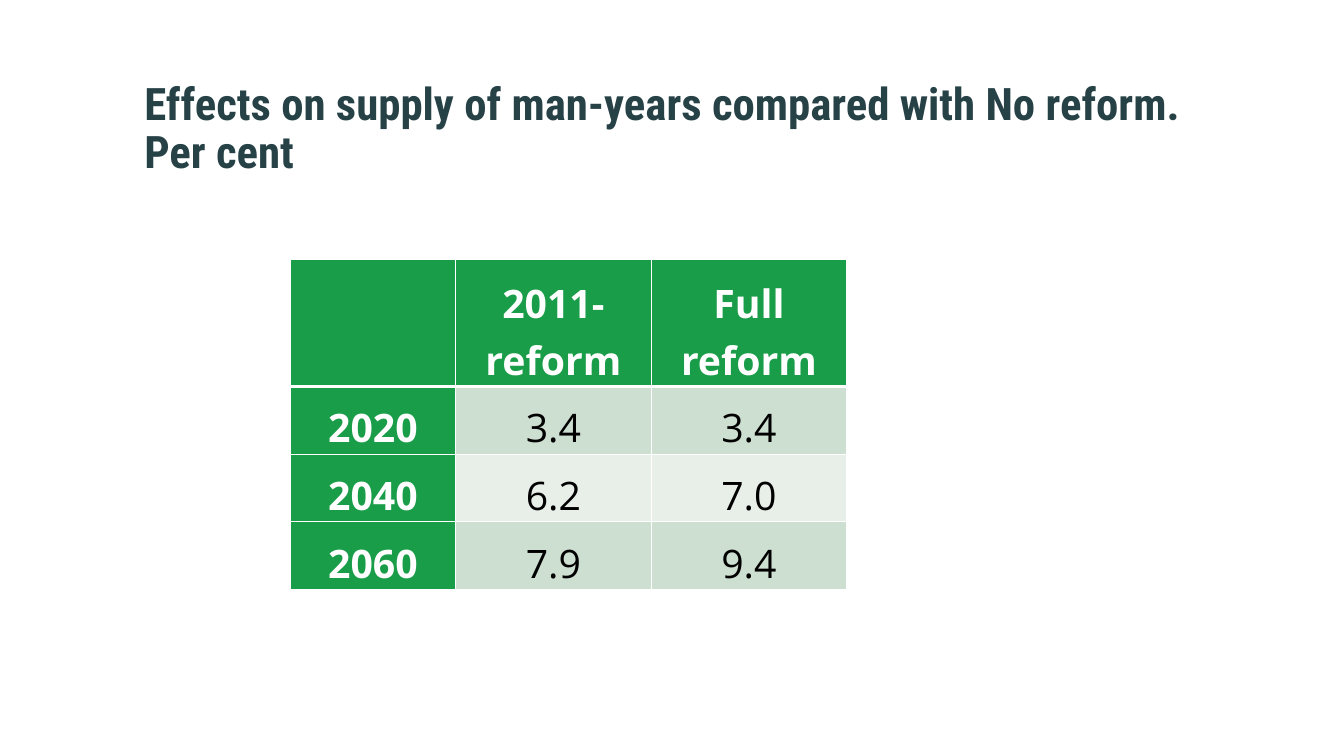
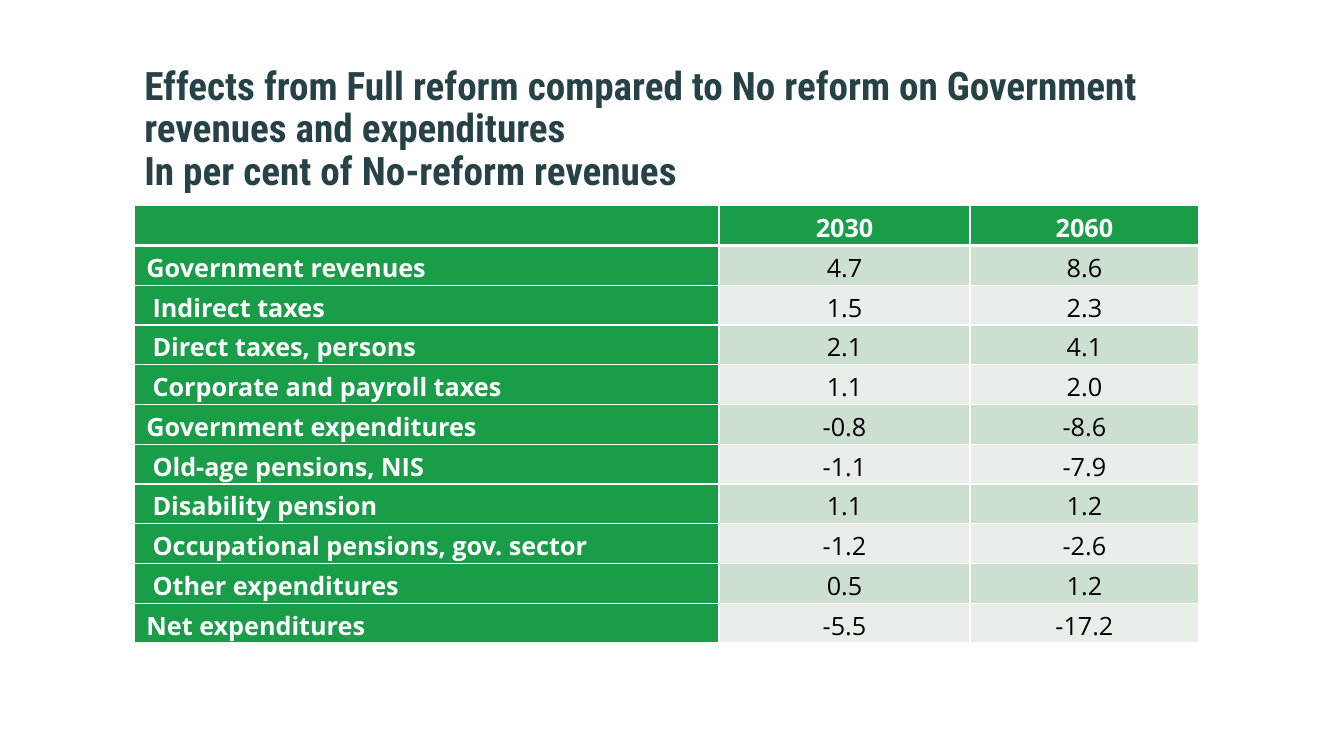
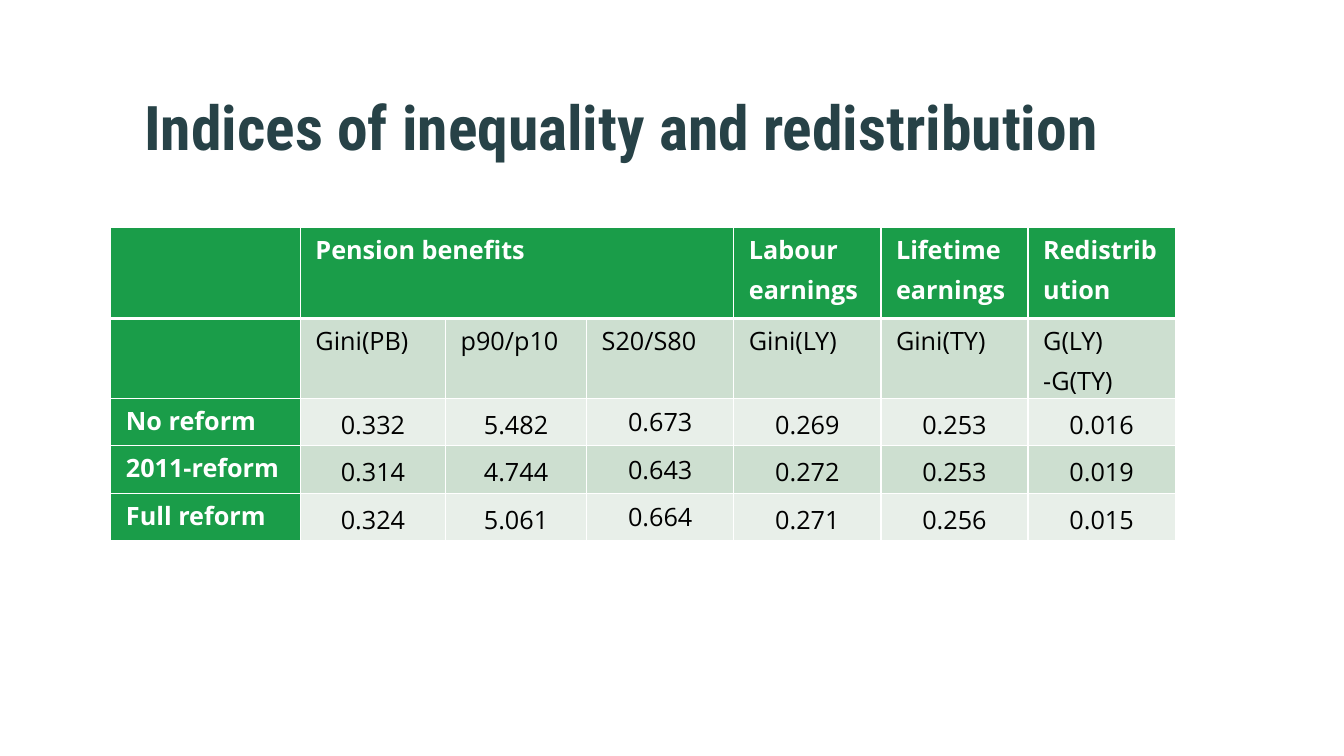
from lxml import etree
from pptx import Presentation
from pptx.dml.color import RGBColor
from pptx.enum.text import MSO_ANCHOR, PP_ALIGN
from pptx.oxml.ns import qn
from pptx.util import Inches, Pt

LEFT, CENTER = PP_ALIGN.LEFT, PP_ALIGN.CENTER
TOP, MIDDLE, BOTTOM = MSO_ANCHOR.TOP, MSO_ANCHOR.MIDDLE, MSO_ANCHOR.BOTTOM

SLIDE_WIDTH, SLIDE_HEIGHT = Inches(13.33), Inches(7.5)
BLANK_LAYOUT = 6
HEAD_FONT, BODY_FONT = "Roboto Condensed", "Open Sans"
INK, BLACK, WHITE = "274247", "000000", "FFFFFF"
GREEN, BANDS = "1A9D49", ("E8EFE9", "CDDFD0")
TITLE_BOX = (10, 8, 79.2, 19.1)
THIN, THICK = 1, 3
SUBITEM_INDENT = 0.06

SUPPLY_ROWS = [
    ["", "2011-reform", "Full reform"],
    ["2020", "3.4", "3.4"],
    ["2040", "6.2", "7.0"],
    ["2060", "7.9", "9.4"],
]
BUDGET_ROWS = [
    ["", "2030", "2060"],
    ["Government revenues", "4.7", "8.6"],
    ["Indirect taxes", "1.5", "2.3"],
    ["Direct taxes, persons", "2.1", "4.1"],
    ["Corporate and payroll taxes", "1.1", "2.0"],
    ["Government expenditures", "-0.8", "-8.6"],
    ["Old-age pensions, NIS", "-1.1", "-7.9"],
    ["Disability pension", "1.1", "1.2"],
    ["Occupational pensions, gov. sector", "-1.2", "-2.6"],
    ["Other expenditures", "0.5", "1.2"],
    ["Net expenditures", "-5.5", "-17.2"],
]
BUDGET_TOTALS = (1, 5, 10)
INEQUALITY_ROWS = [
    ["", "Pension benefits", "", "", "Labour earnings", "Lifetime earnings", "Redistribution"],
    ["", "Gini(PB)", "p90/p10", "S20/S80", "Gini(LY)", "Gini(TY)", "G(LY) -G(TY)"],
    ["No reform", "0.332", "5.482", "0.673", "0.269", "0.253", "0.016"],
    ["2011-reform", "0.314", "4.744", "0.643", "0.272", "0.253", "0.019"],
    ["Full reform", "0.324", "5.061", "0.664", "0.271", "0.256", "0.015"],
]


def color(value):
    """Turn a hex string into a colour."""
    return RGBColor.from_string(value)


def place(box):
    """Turn a box in per cent of the slide into lengths."""
    sides = (SLIDE_WIDTH, SLIDE_HEIGHT) * 2
    return [int(side * share / 100) for side, share in zip(sides, box)]


def apply(target, formats):
    """Set each attribute in a dict of format values."""
    for name, value in formats.items():
        setattr(target, name, value)


def write(paragraph, text, formats, font, ink):
    """Fill a paragraph with formatted text."""
    paragraph.text = text
    apply(paragraph, formats)
    for run in paragraph.runs:
        apply(run.font, font)
        run.font.color.rgb = color(ink)


def add_title(slide, text, size):
    """Add the slide title."""
    frame = slide.shapes.add_textbox(*place(TITLE_BOX)).text_frame
    apply(frame, {"word_wrap": True, "vertical_anchor": MIDDLE,
                  "margin_left": Inches(0.1), "margin_right": Inches(0.1),
                  "margin_top": 0, "margin_bottom": Inches(0.05)})
    write(frame.paragraphs[0], text, {"line_spacing": 0.9},
          {"name": HEAD_FONT, "size": Pt(size), "bold": True}, INK)


def add_borders(cell, row):
    """Draw white cell borders, thick between the header and the body."""
    widths = {"L": THIN, "R": THIN,
              "T": THICK if row == 1 else THIN,
              "B": THICK if row == 0 else THIN}
    properties = cell._tc.get_or_add_tcPr()
    for side, width in widths.items():
        line = etree.SubElement(properties, qn(f"a:ln{side}"), w=str(Pt(width)))
        fill = etree.SubElement(line, qn("a:solidFill"))
        etree.SubElement(fill, qn("a:srgbClr"), val=WHITE)


def add_data_table(slide, box, widths, heights, rows, size, inset, layout):
    """Add a banded table; layout gives alignment, anchor, spacing and indent of a cell."""
    left, top, width, height = place(box)
    table = slide.shapes.add_table(len(rows), len(widths), left, top, width, height).table
    for column, weight in zip(table.columns, widths):
        column.width = int(width * weight / sum(widths))
    for table_row, weight in zip(table.rows, heights):
        table_row.height = int(height * weight / sum(heights))
    for row, texts in enumerate(rows):
        for column, text in enumerate(texts):
            cell = table.cell(row, column)
            heading = row == 0 or column == 0
            alignment, anchor, spacing, indent = layout(row, column)
            add_borders(cell, row)
            cell.fill.solid()
            cell.fill.fore_color.rgb = color(GREEN if heading else BANDS[row % 2])
            apply(cell, {"margin_left": Inches(inset + indent), "margin_right": Inches(inset),
                         "margin_top": 0, "margin_bottom": 0, "vertical_anchor": anchor})
            write(cell.text_frame.paragraphs[0], text,
                  {"alignment": alignment, "line_spacing": spacing},
                  {"name": BODY_FONT, "size": Pt(size), "bold": heading},
                  WHITE if heading else BLACK)
    return table


def supply_layout(row, column):
    """Centre every cell at the bottom."""
    return CENTER, BOTTOM, 1.06, 0


def budget_layout(row, column):
    """Centre the figures and indent the items below a total."""
    if column:
        return CENTER, TOP, 1.15, 0
    return LEFT, TOP, 1.15, 0 if row in BUDGET_TOTALS else SUBITEM_INDENT


def inequality_layout(row, column):
    """Centre the figures and keep the headings at top left."""
    if row < 2 or column == 0:
        return LEFT, TOP, 1.15, 0
    return CENTER, MIDDLE, 1.0 if column == 3 else 1.15, 0


def build_supply_slide(slide):
    """Build the slide on the supply of man-years."""
    add_title(slide, "Effects on supply of man-years compared with No reform. Per cent", 32)
    add_data_table(slide, (21.6, 34.3, 41.4, 43.7), [1.64, 1.94, 1.94],
                   [1.26] + [0.67] * 3, SUPPLY_ROWS, 28, 0.15, supply_layout)


def build_budget_slide(slide):
    """Build the slide on government revenues and expenditures."""
    add_title(slide, "Effects from Full reform compared to No reform on Government "
                     "revenues and expenditures\nIn per cent of No-reform revenues", 28)
    add_data_table(slide, (10, 27.2, 79.2, 57.87), [5.8, 2.49, 2.27],
                   [1] * len(BUDGET_ROWS), BUDGET_ROWS, 18, 0.12, budget_layout)


def build_inequality_slide(slide):
    """Build the slide on inequality and redistribution."""
    add_title(slide, "Indices of inequality and redistribution", 44)
    table = add_data_table(slide, (8.25, 30.13, 79.2, 41.4), [1.88, 1.44, 1.4] + [1.46] * 4,
                           [0.9, 0.79] + [0.47] * 3, INEQUALITY_ROWS, 18, 0.15,
                           inequality_layout)
    table.cell(0, 1).merge(table.cell(0, 3))


def main():
    """Build and save the presentation."""
    presentation = Presentation()
    apply(presentation, {"slide_width": SLIDE_WIDTH, "slide_height": SLIDE_HEIGHT})
    for build in (build_supply_slide, build_budget_slide, build_inequality_slide):
        build(presentation.slides.add_slide(presentation.slide_layouts[BLANK_LAYOUT]))
    presentation.save("out.pptx")


if __name__ == "__main__":
    main()
